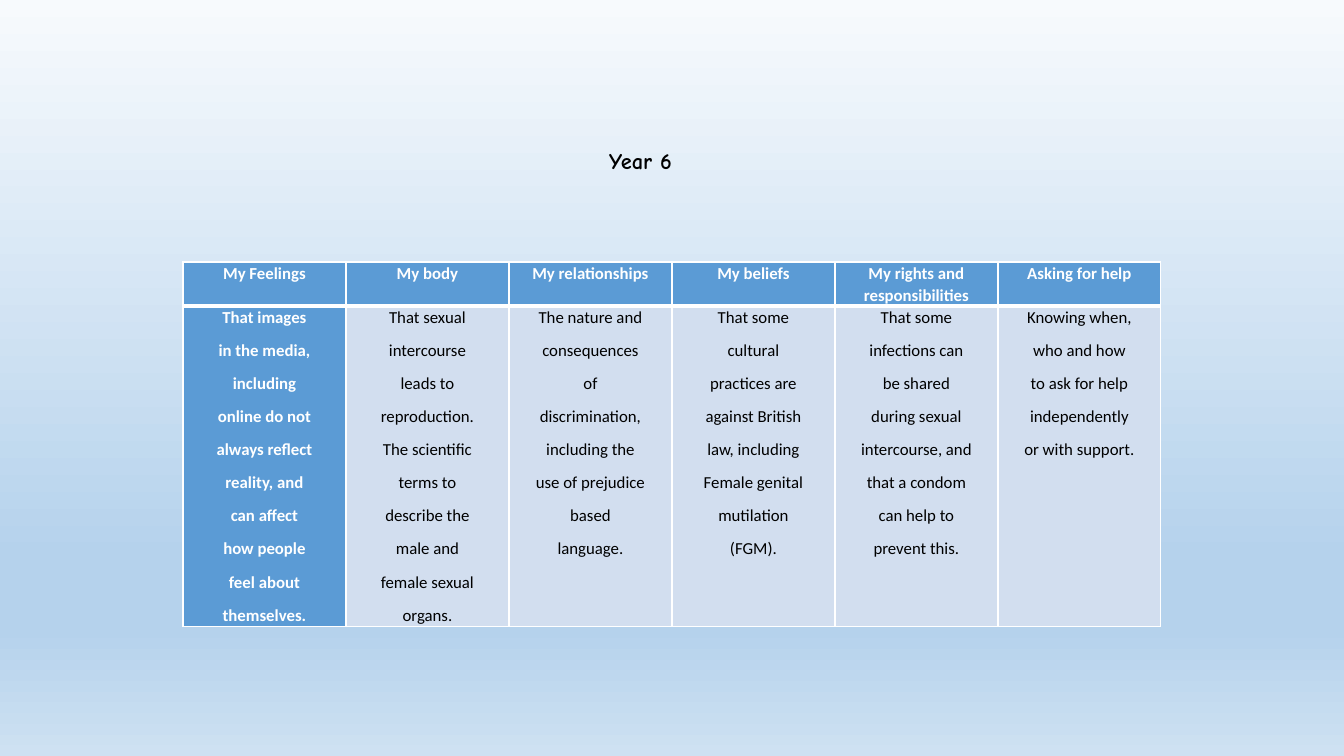
import pptx
import pptx.util
import pptx.dml.color
import pptx.enum.text
import pptx.oxml
import pptx.oxml.ns

SCALE = 914400 / 100.8
NAMESPACE = pptx.oxml.ns.nsdecls("a")
CENTER = pptx.enum.text.PP_ALIGN.CENTER


def px(length):
    return pptx.util.Emu(round(length * SCALE))


def color(value):
    return pptx.dml.color.RGBColor.from_string(value)


presentation = pptx.Presentation()
presentation.slide_width = px(1344)
presentation.slide_height = px(756)
slide = presentation.slides.add_slide(presentation.slide_layouts[6])

background = slide.background.fill
background.gradient()
background.gradient_angle = 270
stop_list = background.gradient_stops[0]._gs.getparent()
for stop in list(stop_list):
    stop_list.remove(stop)
for position, value in [(0, "F7FAFD"), (74, "B5D2EC"), (83, "B5D2EC"), (100, "CEE1F2")]:
    stop_list.append(pptx.oxml.parse_xml(
        f'<a:gs {NAMESPACE} pos="{position * 1000}"><a:srgbClr val="{value}"/></a:gs>'))

topics = [
    ("My Feelings", "That images\nin the media,\nincluding\nonline do not\nalways reflect\n"
     "reality, and\ncan affect\nhow people\nfeel about\nthemselves."),
    ("My body", "That sexual\nintercourse\nleads to\nreproduction.\nThe scientific\n"
     "terms to\ndescribe the\nmale and\nfemale sexual\norgans."),
    ("My relationships", "The nature and\nconsequences\nof\ndiscrimination,\n"
     "including the\nuse of prejudice\nbased\nlanguage."),
    ("My beliefs", "That some\ncultural\npractices are\nagainst British\n"
     "law, including\nFemale genital\nmutilation\n(FGM)."),
    ("My rights and responsibilities", "That some\ninfections can\nbe shared\nduring sexual\n"
     "intercourse, and\nthat a condom\ncan help to\nprevent this."),
    ("Asking for help", "Knowing when,\nwho and how\nto ask for help\nindependently\n"
     "or with support."),
]
row_heights = [43, 321]
column_width = 163
table = slide.shapes.add_table(
    len(row_heights), len(topics), px(183), px(262),
    px(column_width * len(topics)), px(sum(row_heights))).table
table.horz_banding = False
for row, height in zip(table.rows, row_heights):
    row.height = px(height)

cell_format = {"margin_left": px(7), "margin_right": px(7), "margin_top": 0, "margin_bottom": 0}
paragraph_format = {"alignment": CENTER, "line_spacing": 1.07, "space_after": pptx.util.Pt(8)}

for column_index, topic in enumerate(topics):
    table.columns[column_index].width = px(column_width)
    for row_index, text in enumerate(topic):
        cell = table.cell(row_index, column_index)
        heading = row_index == 0 or column_index == 0
        for name, value in cell_format.items():
            setattr(cell, name, value)
        borders = {"lnL": 1, "lnR": 1, "lnT": 3 if row_index else 1, "lnB": 1 if row_index else 3}
        for side, width in borders.items():
            cell._tc.get_or_add_tcPr().append(pptx.oxml.parse_xml(
                f'<a:{side} {NAMESPACE} w="{width * 12700}"><a:solidFill>'
                f'<a:srgbClr val="FFFFFF"/></a:solidFill></a:{side}>'))
        cell.fill.solid()
        cell.fill.fore_color.rgb = color("5B9BD5" if heading else "D2DEEF")
        cell.text_frame.text = text
        font_format = {"name": "Calibri", "size": pptx.util.Pt(12), "bold": heading}
        for paragraph in cell.text_frame.paragraphs:
            for name, value in paragraph_format.items():
                setattr(paragraph, name, value)
            font = paragraph.runs[0].font
            for name, value in font_format.items():
                setattr(font, name, value)
            font.color.rgb = color("FFFFFF" if heading else "000000")

title_frame = slide.shapes.add_textbox(px(593), px(142), px(95), px(37)).text_frame
title_format = {
    "word_wrap": False,
    "auto_size": pptx.enum.text.MSO_AUTO_SIZE.SHAPE_TO_FIT_TEXT,
    "vertical_anchor": pptx.enum.text.MSO_ANCHOR.MIDDLE,
    "text": "Year 6",
}
for name, value in title_format.items():
    setattr(title_frame, name, value)
title_paragraph = title_frame.paragraphs[0]
title_paragraph.alignment = CENTER
title_font = title_paragraph.runs[0].font
for name, value in {"name": "Comic Neue", "size": pptx.util.Pt(16), "bold": True}.items():
    setattr(title_font, name, value)
title_font.color.rgb = color("000000")

presentation.save("out.pptx")
